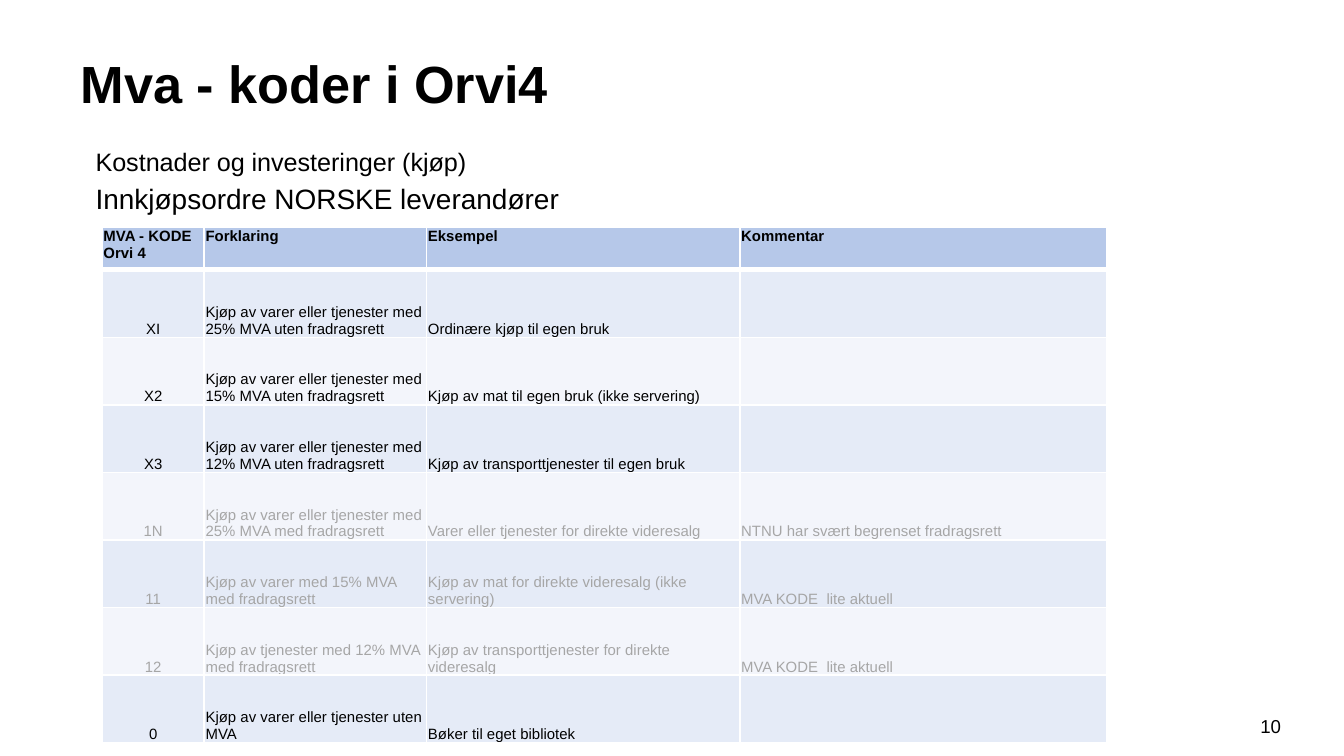
"""Builds the slide that lists VAT codes for Norwegian suppliers."""
from lxml import etree
from pptx import Presentation
from pptx.dml.color import RGBColor
from pptx.enum.text import MSO_ANCHOR, PP_ALIGN
from pptx.oxml.ns import qn
from pptx.util import Inches, Pt

LEFT, CENTER = PP_ALIGN.LEFT, PP_ALIGN.CENTER
TOP, MIDDLE, BOTTOM = MSO_ANCHOR.TOP, MSO_ANCHOR.MIDDLE, MSO_ANCHOR.BOTTOM

BLACK = RGBColor(0x00, 0x00, 0x00)
WHITE = RGBColor(0xFF, 0xFF, 0xFF)
GREY = RGBColor(0xA6, 0xA6, 0xA6)
HEADER_BLUE = RGBColor(0xB6, 0xC8, 0xE9)
BANDS = (RGBColor(0xE5, 0xEB, 0xF7), RGBColor(0xF3, 0xF5, 0xFB))

COLUMN_WIDTHS = (7.6, 16.55, 23.3, 27.3)
HEADINGS = ("MVA - KODE Orvi 4", "Forklaring", "Eksempel", "Kommentar")
CODES = (
    ("XI", "Kjøp av varer eller tjenester med 25% MVA uten fradragsrett",
     "Ordinære kjøp til egen bruk", ""),
    ("X2", "Kjøp av varer eller tjenester med 15% MVA uten fradragsrett",
     "Kjøp av mat til egen bruk (ikke servering)", ""),
    ("X3", "Kjøp av varer eller tjenester med 12% MVA uten fradragsrett",
     "Kjøp av transporttjenester til egen bruk", ""),
    ("1N", "Kjøp av varer eller tjenester med 25% MVA med fradragsrett",
     "Varer eller tjenester for direkte videresalg",
     "NTNU har svært begrenset fradragsrett"),
    ("11", "Kjøp av varer med 15% MVA med fradragsrett",
     "Kjøp av mat for direkte videresalg (ikke servering)",
     "MVA KODE  lite aktuell"),
    ("12", "Kjøp av tjenester med 12% MVA med fradragsrett",
     "Kjøp av transporttjenester for direkte videresalg",
     "MVA KODE  lite aktuell"),
    ("0", "Kjøp av varer eller tjenester uten MVA",
     "Bøker til eget bibliotek", ""),
)
RARE_CODES = ("1N", "11", "12")


def write(para, text, size=8, color=BLACK, bold=False, align=LEFT, before=0):
    """Put text in a paragraph with the given format."""
    para.alignment = align
    para.space_before = Pt(before)
    font = para.font
    if text:
        span = para.add_run()
        span.text = text
        font = span.font
    font.name = "Arial"
    font.size = Pt(size)
    font.bold = bold
    font.color.rgb = color


class Page:
    """Holds the deck, the current slide and a grid of 100 columns."""

    def __init__(self, width, height):
        """Open a deck with one title-only slide."""
        self.deck = Presentation()
        self.deck.slide_width = Inches(width)
        self.deck.slide_height = Inches(height)
        self.unit = self.deck.slide_width / 100
        self.slide = self.deck.slides.add_slide(self.deck.slide_layouts[5])

    def grid(self, *lengths):
        """Turn grid units into slide lengths."""
        return [round(length * self.unit) for length in lengths]

    def title(self, text, *place):
        """Move and fill the title placeholder."""
        box = self.slide.shapes.title
        box.left, box.top, box.width, box.height = self.grid(*place)
        box.text_frame.vertical_anchor = MIDDLE
        write(box.text_frame.paragraphs[0], text, size=28, bold=True)

    def text(self, lines, *place, align=LEFT):
        """Add a text box from (text, size, space before) lines."""
        frame = self.slide.shapes.add_textbox(*self.grid(*place)).text_frame
        frame.word_wrap = True
        for index, (text, size, before) in enumerate(lines):
            para = frame.add_paragraph() if index else frame.paragraphs[0]
            write(para, text, size=size, before=before, align=align)

    def borders(self, cell, top, bottom):
        """Draw the white borders of a cell, widths in points."""
        properties = cell._tc.get_or_add_tcPr()
        for side, width in (("L", 1), ("R", 1), ("T", top), ("B", bottom)):
            line = etree.SubElement(properties, qn(f"a:ln{side}"), w=str(Pt(width)))
            fill = etree.SubElement(line, qn("a:solidFill"))
            etree.SubElement(fill, qn("a:srgbClr"), val=str(WHITE))

    def cell(self, cell, text, fill, anchor, top=1, bottom=1, **text_format):
        """Fill and format one table cell."""
        cell.margin_left = cell.margin_right = cell.margin_top = Inches(0.01)
        cell.margin_bottom = 0
        cell.vertical_anchor = anchor
        self.borders(cell, top, bottom)
        cell.fill.solid()
        cell.fill.fore_color.rgb = fill
        write(cell.text_frame.paragraphs[0], text, **text_format)

    def table(self, left, top, height, header_height):
        """Add the table of codes with equal rows below its header."""
        place = self.grid(left, top, sum(COLUMN_WIDTHS), height)
        table = self.slide.shapes.add_table(
            len(CODES) + 1, len(COLUMN_WIDTHS), *place).table
        table.first_row = table.horz_banding = False
        for column, width in zip(table.columns, self.grid(*COLUMN_WIDTHS)):
            column.width = width
        row_height = (height - header_height) / len(CODES)
        heights = [header_height] + [row_height] * len(CODES)
        for row, size in zip(table.rows, self.grid(*heights)):
            row.height = size
        for column, heading in enumerate(HEADINGS):
            self.cell(table.cell(0, column), heading, HEADER_BLUE, TOP,
                      bottom=3, bold=True)
        for row, values in enumerate(CODES):
            color = GREY if values[0] in RARE_CODES else BLACK
            for column, value in enumerate(values):
                self.cell(table.cell(row + 1, column), value, BANDS[row % 2],
                          BOTTOM, top=1 if row else 3, color=color,
                          align=LEFT if column else CENTER)


def main():
    """Build and save the slide."""
    page = Page(10, 10 * 9 / 16)
    page.text([("10", 10, 0)], 92.7, 52.7, 3.7, 3, align=CENTER)
    page.title("Mva - koder i Orvi4", 5, 3.3, 83.3, 5.7)
    page.text([("Kostnader og investeringer (kjøp)", 13.5, 0),
               ("Innkjøpsordre NORSKE leverandører", 15, 2.5)],
              6.13, 10.4, 67.5, 41.4)
    page.table(7.6, 16.88, height=38.4, header_height=3.2)
    page.deck.save("out.pptx")


if __name__ == "__main__":
    main()
